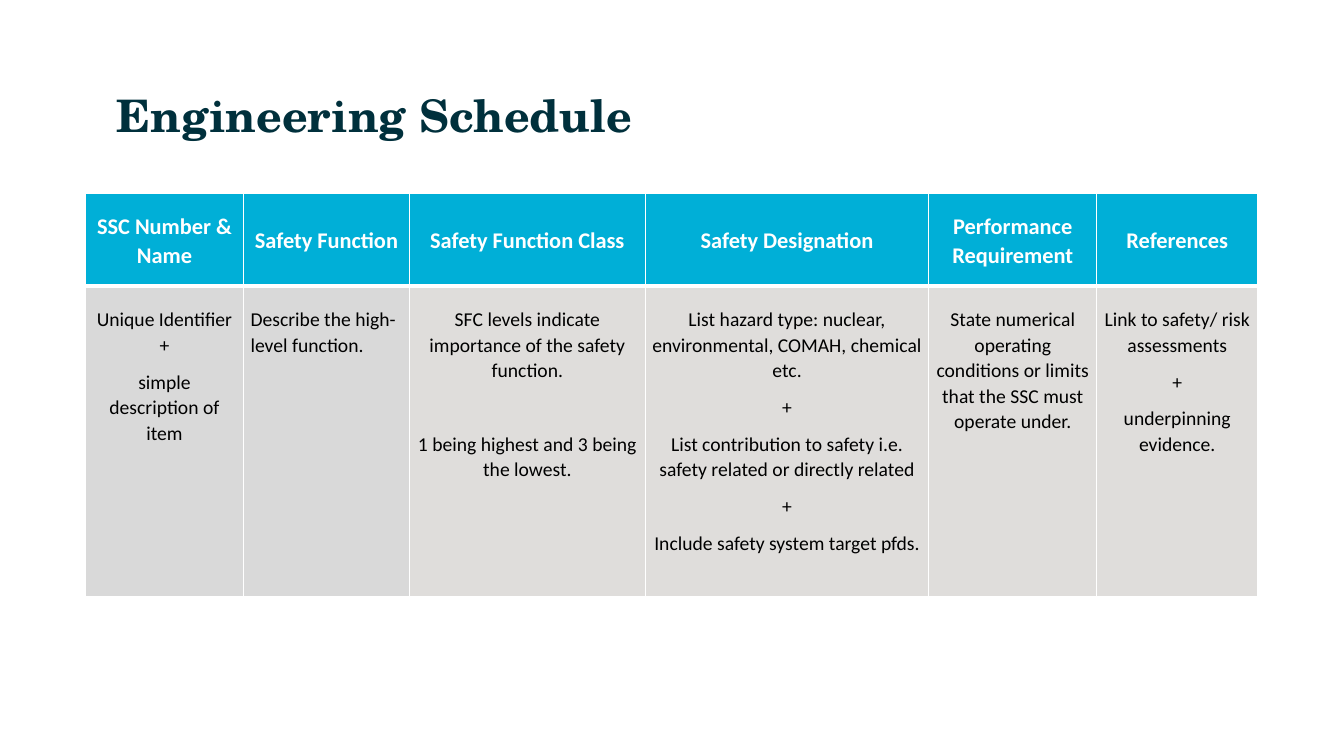
import pptx
import pptx.dml.color
import pptx.enum.text
import pptx.oxml
import pptx.oxml.ns
import pptx.util

Pt = pptx.util.Pt
RGBColor = pptx.dml.color.RGBColor
ALIGN = pptx.enum.text.PP_ALIGN
ANCHOR = pptx.enum.text.MSO_ANCHOR

NAVY = RGBColor(0x00, 0x30, 0x3C)
CYAN = RGBColor(0x00, 0xAF, 0xD7)
LIGHT_GREY = RGBColor(0xD9, 0xD9, 0xD9)
WARM_GREY = RGBColor(0xDF, 0xDD, 0xDB)
WHITE = RGBColor(0xFF, 0xFF, 0xFF)
BLACK = RGBColor(0x00, 0x00, 0x00)

HEADER_HEIGHT, BODY_HEIGHT = 66, 222
# Heading, width, body fill, body alignment, space between paragraphs, body paragraphs
COLUMNS = [
    ("SSC Number & Name", 113, LIGHT_GREY, ALIGN.CENTER, 8,
     ["Unique Identifier +", "simple description of item"]),
    ("Safety Function", 118.5, LIGHT_GREY, ALIGN.LEFT, 8,
     ["Describe the high-level function."]),
    ("Safety Function Class", 168.5, WARM_GREY, ALIGN.CENTER, 34,
     ["SFC levels indicate importance of the safety function.",
      "1 being highest and 3 being the lowest."]),
    ("Safety Designation", 202.5, WARM_GREY, ALIGN.CENTER, 8,
     ["List hazard type: nuclear, environmental, COMAH, chemical etc.", "+",
      "List contribution to safety i.e. safety related or directly related", "+",
      "Include safety system target pfds."]),
    ("Performance Requirement", 120, WARM_GREY, ALIGN.CENTER, 8,
     ["State numerical operating conditions or limits that the SSC must operate under."]),
    ("References", 115, WARM_GREY, ALIGN.CENTER, 8,
     ["Link to safety/ risk assessments", "+", "underpinning evidence."]),
]


def write(tf, paragraphs, size, color, font="Calibri", bold=False,
          align=ALIGN.CENTER, line=1.07, after=8):
    for i, text in enumerate(paragraphs):
        p = tf.paragraphs[0] if i == 0 else tf.add_paragraph()
        p.alignment = align
        p.line_spacing = line
        p.space_before = Pt(0)
        p.space_after = Pt(after)
        r = p.add_run()
        r.text = text
        r.font.name = font
        r.font.size = Pt(size)
        r.font.bold = bold
        r.font.color.rgb = color


def format_cell(cell, fill, anchor, top_margin, thick_side):
    """Give the cell its fill, margins and white borders, one side 3 pt thick."""
    cell.vertical_anchor = anchor
    cell.margin_left = cell.margin_right = Pt(5)
    cell.margin_top = Pt(top_margin)
    cell.margin_bottom = Pt(0)
    tcPr = cell._tc.get_or_add_tcPr()
    for side in "LRTB":
        width = Pt(3 if side == thick_side else 1)
        tcPr.append(pptx.oxml.parse_xml(
            f'<a:ln{side} {pptx.oxml.ns.nsdecls("a")} w="{width}"><a:solidFill>'
            f'<a:srgbClr val="{WHITE}"/></a:solidFill></a:ln{side}>'))
    cell.fill.solid()
    cell.fill.fore_color.rgb = fill


prs = pptx.Presentation()
prs.slide_width, prs.slide_height = Pt(960), Pt(540)
s = prs.slides.add_slide(prs.slide_layouts[5])

title = s.shapes.title
title.left, title.top, title.width, title.height = Pt(76.3), Pt(63.4), Pt(828), Pt(67)
tf = title.text_frame
tf.word_wrap = True
tf.auto_size = pptx.enum.text.MSO_AUTO_SIZE.NONE
tf.vertical_anchor = ANCHOR.TOP
write(tf, ["Engineering Schedule"], 32, NAVY, font="TeX Gyre Schola", bold=True,
      align=ALIGN.LEFT, line=0.9, after=0)

table_width = sum(column[1] for column in COLUMNS)
table = s.shapes.add_table(2, len(COLUMNS), Pt(61), Pt(138.5), Pt(table_width),
                           Pt(HEADER_HEIGHT + BODY_HEIGHT)).table
table.horz_banding = False
table.rows[0].height = Pt(HEADER_HEIGHT)
table.rows[1].height = Pt(BODY_HEIGHT)

for i, (heading, width, fill, align, gap, paragraphs) in enumerate(COLUMNS):
    table.columns[i].width = Pt(width)
    header, body = table.cell(0, i), table.cell(1, i)
    format_cell(header, CYAN, ANCHOR.MIDDLE, 0, "B")
    write(header.text_frame, [heading], 16, WHITE, bold=True)
    format_cell(body, fill, ANCHOR.TOP, 14.5, "T")
    write(body.text_frame, paragraphs, 14, BLACK, align=align, after=gap)

prs.save("out.pptx")
